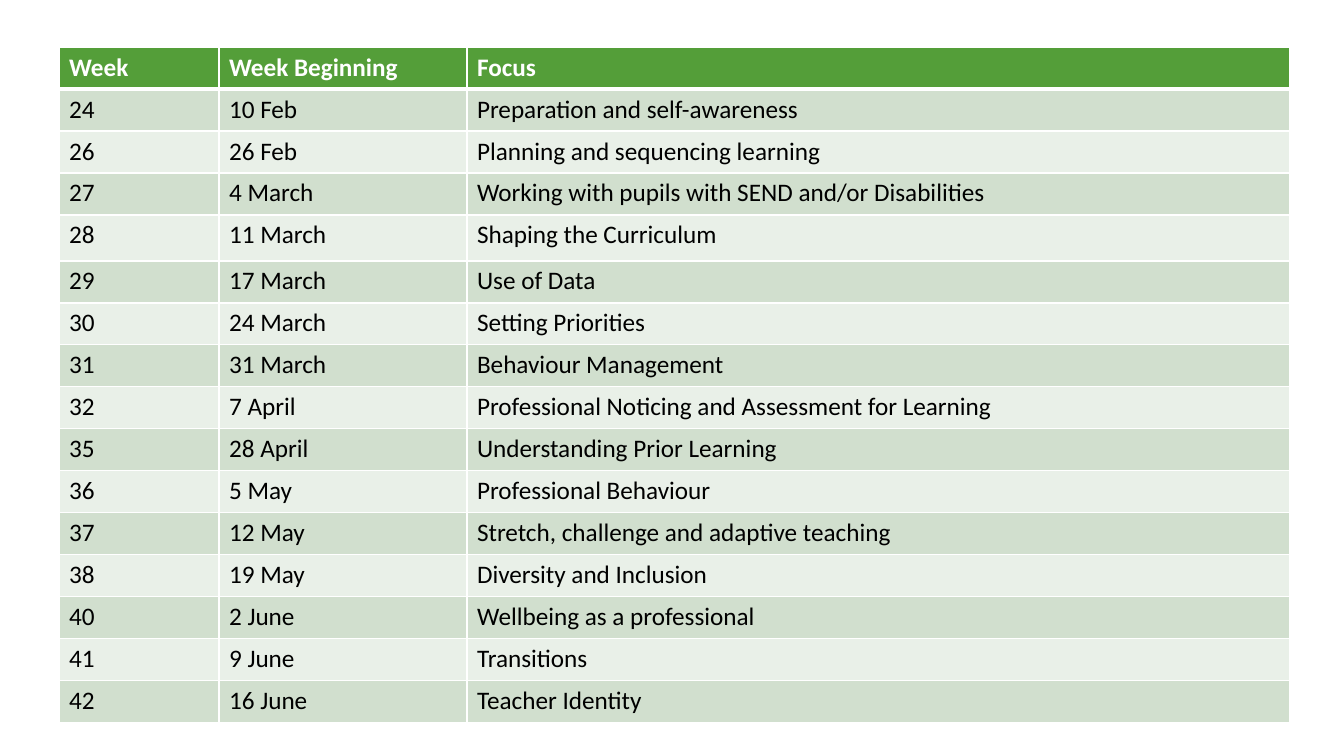
from dataclasses import dataclass

from lxml.etree import SubElement
from pptx import Presentation
from pptx.dml.color import RGBColor
from pptx.oxml.ns import qn
from pptx.util import Emu, Pt


@dataclass(frozen=True)
class Theme:
    font: str = "Calibri"
    text_size: int = 18
    header_fill: str = "549E39"
    header_text: str = "FFFFFF"
    body_text: str = "000000"
    odd_fill: str = "D1DFCE"
    even_fill: str = "E9F0E8"
    border: str = "FFFFFF"
    thin: int = 1
    thick: int = 3


THEME = Theme()
EMU_PER_PX = 914400 / 100.8

HEADINGS = ("Week", "Week Beginning", "Focus")
WEEKS = [
    ("24", "10 Feb", "Preparation and self-awareness"),
    ("26", "26 Feb", "Planning and sequencing learning"),
    ("27", "4 March", "Working with pupils with SEND and/or Disabilities"),
    ("28", "11 March", "Shaping the Curriculum"),
    ("29", "17 March", "Use of Data"),
    ("30", "24 March", "Setting Priorities"),
    ("31", "31 March", "Behaviour Management"),
    ("32", "7 April", "Professional Noticing and Assessment for Learning"),
    ("35", "28 April", "Understanding Prior Learning"),
    ("36", "5 May", "Professional Behaviour"),
    ("37", "12 May", "Stretch, challenge and adaptive teaching"),
    ("38", "19 May", "Diversity and Inclusion"),
    ("40", "2 June", "Wellbeing as a professional"),
    ("41", "9 June", "Transitions"),
    ("42", "16 June", "Teacher Identity"),
]
WEEK_WIDTH, BEGINNING_WIDTH = 160, 248
ROW_HEIGHT, TALL_ROW_HEIGHT = 42, 46
TALL_WEEK = "28"


def px(length):
    return Emu(round(length * EMU_PER_PX))


def set_borders(cell, top, bottom):
    properties = cell._tc.get_or_add_tcPr()
    widths = {"a:lnL": THEME.thin, "a:lnR": THEME.thin, "a:lnT": top, "a:lnB": bottom}
    for side, width in widths.items():
        line = SubElement(properties, qn(side), w=str(Pt(width)))
        SubElement(SubElement(line, qn("a:solidFill")), qn("a:srgbClr"), val=THEME.border)


def fill_cell(cell, wording, fill, color, bold, top, bottom):
    set_borders(cell, top, bottom)
    cell.fill.solid()
    cell.fill.fore_color.rgb = RGBColor.from_string(fill)
    run = cell.text_frame.paragraphs[0].add_run()
    run.text = wording
    run.font.name = THEME.font
    run.font.size = Pt(THEME.text_size)
    run.font.bold = bold
    run.font.color.rgb = RGBColor.from_string(color)


def add_schedule(slide, left, top, width, height):
    entries = [HEADINGS, *WEEKS]
    schedule = slide.shapes.add_table(
        len(entries), len(HEADINGS), px(left), px(top), px(width), px(height)
    ).table
    focus_width = width - WEEK_WIDTH - BEGINNING_WIDTH
    for column, column_width in zip(
        schedule.columns, (WEEK_WIDTH, BEGINNING_WIDTH, focus_width)
    ):
        column.width = px(column_width)

    for index, entry in enumerate(entries):
        is_header = index == 0
        band = THEME.odd_fill if index % 2 else THEME.even_fill
        row = schedule.rows[index]
        row.height = px(TALL_ROW_HEIGHT if entry[0] == TALL_WEEK else ROW_HEIGHT)
        for cell, wording in zip(row.cells, entry):
            fill_cell(
                cell,
                wording,
                fill=THEME.header_fill if is_header else band,
                color=THEME.header_text if is_header else THEME.body_text,
                bold=is_header,
                top=THEME.thick if index == 1 else THEME.thin,
                bottom=THEME.thick if is_header else THEME.thin,
            )


def main():
    presentation = Presentation()
    presentation.slide_width = px(1344)
    presentation.slide_height = px(756)
    slide = presentation.slides.add_slide(presentation.slide_layouts[6])
    add_schedule(slide, left=59, top=47, width=1231, height=676)
    presentation.save("out.pptx")


if __name__ == "__main__":
    main()
